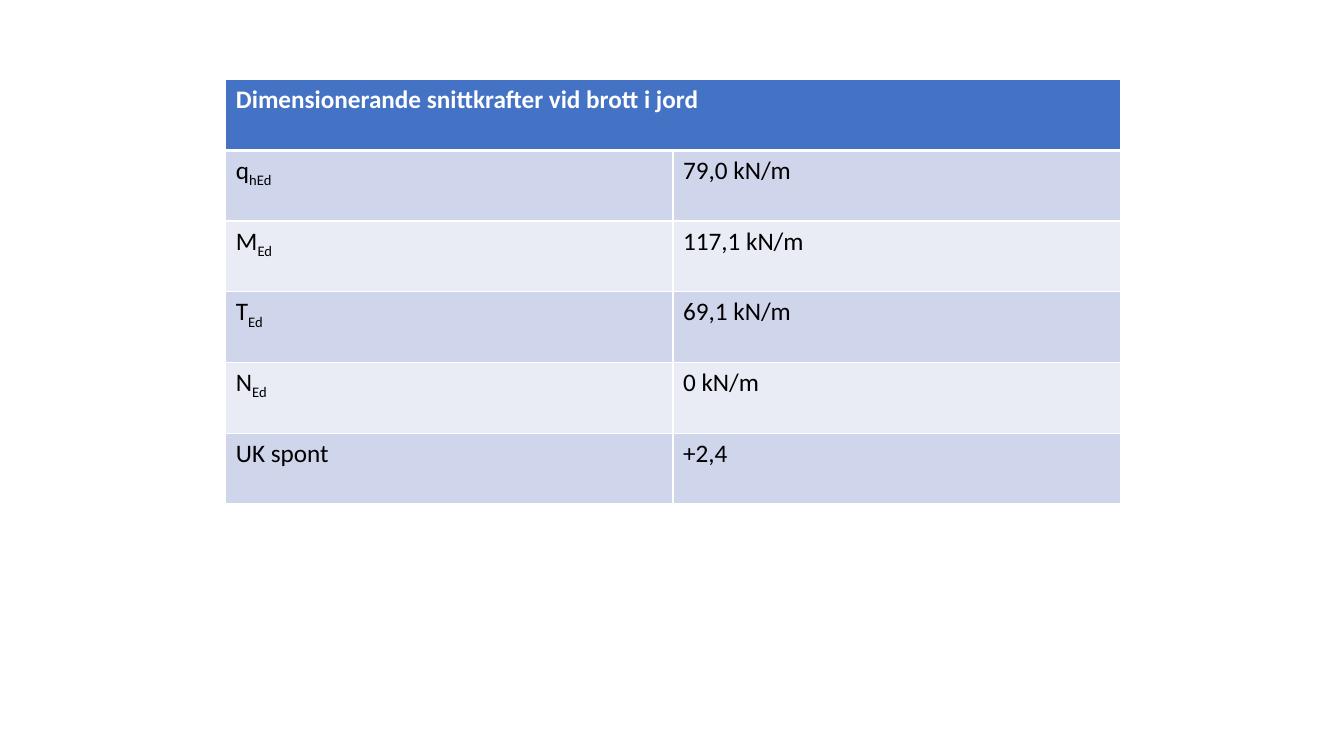
from dataclasses import dataclass

from lxml.etree import SubElement
from pptx import Presentation
from pptx.dml.color import RGBColor
from pptx.oxml.ns import qn
from pptx.util import Inches, Pt


@dataclass(frozen=True)
class Theme:
    font: str = "Calibri"
    size: int = 18
    header_fill: str = "4472C4"
    header_text: str = "FFFFFF"
    body_text: str = "000000"
    bands: tuple = ("CFD5EA", "E9EBF5")
    border: str = "FFFFFF"
    thin: int = 1
    thick: int = 3


THEME = Theme()
HEADING = "Dimensionerande snittkrafter vid brott i jord"
# Symbol, subscript, value
SECTION_FORCES = [
    ("q", "hEd", "79,0 kN/m"),
    ("M", "Ed", "117,1 kN/m"),
    ("T", "Ed", "69,1 kN/m"),
    ("N", "Ed", "0 kN/m"),
    ("UK spont", "", "+2,4"),
]


def add_borders(cell, bottom):
    properties = cell._tc.get_or_add_tcPr()
    widths = {"a:lnL": THEME.thin, "a:lnR": THEME.thin,
              "a:lnT": THEME.thin, "a:lnB": bottom}
    for side, width in widths.items():
        edge = SubElement(properties, qn(side), w=str(Pt(width)))
        paint = SubElement(edge, qn("a:solidFill"))
        SubElement(paint, qn("a:srgbClr"), val=THEME.border)


def add_run(cell, wording, color, bold=False, subscript=False):
    run = cell.text_frame.paragraphs[0].add_run()
    run.text = wording
    font_format = {"name": THEME.font, "size": Pt(THEME.size), "bold": bold}
    for attribute, setting in font_format.items():
        setattr(run.font, attribute, setting)
    run.font.color.rgb = RGBColor.from_string(color)
    if subscript:
        run._r.get_or_add_rPr().set("baseline", "-25000")


def style_cell(cell, fill, bottom=THEME.thin):
    add_borders(cell, bottom)
    cell.fill.solid()
    cell.fill.fore_color.rgb = RGBColor.from_string(fill)


def add_forces_table(slide, left, top, width, height):
    row_count = len(SECTION_FORCES) + 1
    table = slide.shapes.add_table(row_count, 2, left, top, width, height).table

    heading = table.cell(0, 0)
    heading.merge(table.cell(0, 1))
    for cell in table.rows[0].cells:
        style_cell(cell, THEME.header_fill, THEME.thick)
    add_run(heading, HEADING, THEME.header_text, bold=True)

    for row, (symbol, index, force) in enumerate(SECTION_FORCES, start=1):
        symbol_cell, force_cell = table.rows[row].cells
        for cell in (symbol_cell, force_cell):
            style_cell(cell, THEME.bands[(row - 1) % 2])
        add_run(symbol_cell, symbol, THEME.body_text)
        if index:
            add_run(symbol_cell, index, THEME.body_text, subscript=True)
        add_run(force_cell, force, THEME.body_text)


def main():
    presentation = Presentation()
    presentation.slide_width = Inches(13.33)
    presentation.slide_height = Inches(7.5)
    slide = presentation.slides.add_slide(presentation.slide_layouts[6])
    add_forces_table(slide, Inches(2.24), Inches(0.79), Inches(8.87), Inches(4.21))
    presentation.save("out.pptx")


if __name__ == "__main__":
    main()
